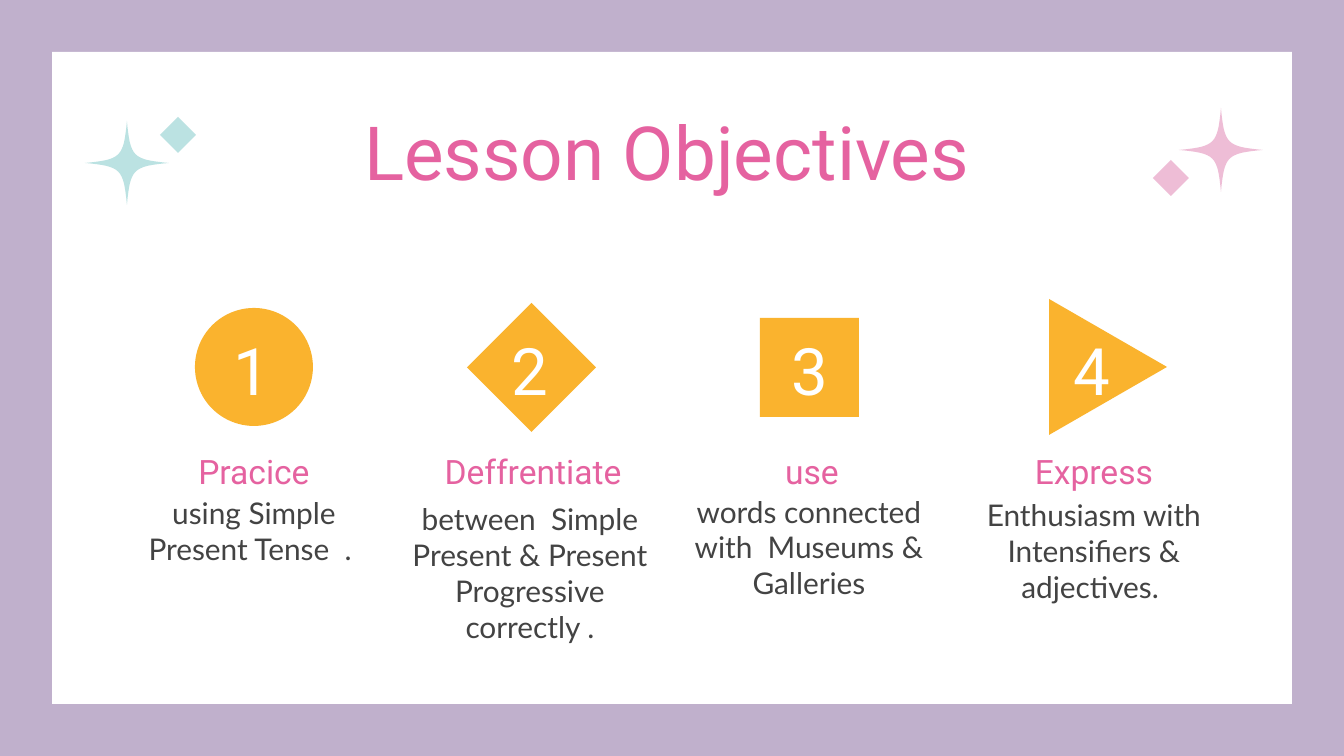
from dataclasses import dataclass

import pptx
from pptx import util as u
from pptx.dml import color
from pptx.enum import shapes, text

SCALE = 914400 / 134.4
FINE = 100
INSET = 13
COLORS = {
    "lilac": "C0B0CC",
    "white": "FFFFFF",
    "mint": "BBE2E2",
    "blush": "EEBDD6",
    "amber": "FAB32E",
    "pink": "E562A0",
    "gray": "434343",
}
MSO = shapes.MSO_SHAPE


@dataclass(frozen=True)
class Box:
    x: int
    y: int
    w: int
    h: int


@dataclass(frozen=True)
class Style:
    font: str
    size: int
    color: str


@dataclass(frozen=True)
class Sparkle:
    star_x: int
    star_y: int
    gem_x: int
    gem_y: int
    color: str


@dataclass(frozen=True)
class Objective:
    kind: MSO
    marker: Box
    rotation: int
    number: Box
    heading: str
    heading_box: Box
    detail: str
    detail_box: Box
    bottom_inset: int = INSET


TITLE = Style("Roboto", 40, "pink")
NUMBER = Style("Roboto", 35, "white")
HEADING = Style("Roboto", 18, "pink")
DETAIL = Style("Lato", 16, "gray")


def centered(cx: int, cy: int, w: int, h: int) -> Box:
    return Box(cx - w // 2, cy - h // 2, w, h)


SPARKLES = [
    Sparkle(127, 163, 178, 135, "mint"),
    Sparkle(1221, 150, 1171, 178, "blush"),
]
OBJECTIVES = [
    Objective(MSO.OVAL, centered(254, 367, 118, 118), 0, centered(252, 369, 228, 60),
              "Pracice", centered(254, 471, 276, 52),
              "using Simple Present Tense  . ", Box(125, 484, 258, 93)),
    Objective(MSO.DIAMOND, centered(531, 367, 129, 129), 0, centered(530, 369, 228, 60),
              "Deffrentiate", centered(533, 471, 270, 52),
              "between  Simple Present & Present Progressive correctly .",
              Box(391, 526, 278, 93)),
    Objective(MSO.RECTANGLE, centered(809, 367, 99, 99), 0, centered(810, 369, 228, 60),
              "use", centered(812, 471, 276, 52),
              "words connected with  Museums & Galleries", Box(680, 516, 258, 93), 44),
    Objective(MSO.ISOSCELES_TRIANGLE, centered(1108, 367, 136, 118), 90,
              centered(1092, 369, 228, 60),
              "Express", centered(1094, 471, 276, 52),
              "Enthusiasm with Intensifiers & adjectives. ", Box(965, 504, 258, 93)),
]


def px(n: int) -> int:
    return u.Emu(round(n * SCALE))


def rgb(name: str) -> color.RGBColor:
    return color.RGBColor.from_string(COLORS[name])


def paint(sp, fill: str) -> None:
    sp.shadow.inherit = False
    sp.fill.solid()
    sp.fill.fore_color.rgb = rgb(fill)
    sp.line.fill.background()


def place(sp, box: Box) -> None:
    sp.left, sp.top, sp.width, sp.height = map(px, (box.x, box.y, box.w, box.h))


def add_preset(s, kind: MSO, box: Box, fill: str, rotation: int = 0):
    sp = s.shapes.add_shape(kind, px(box.x), px(box.y), px(box.w), px(box.h))
    sp.rotation = rotation
    paint(sp, fill)
    return sp


def star_points(cx: int, cy: int, radius: int, steps: int = 16) -> list[tuple[float, float]]:
    controls = [(0, -1), (-0.08, -0.14), (-0.14, -0.08), (-1, 0)]
    points = []
    for _ in range(4):
        for i in range(steps):
            t = i / steps
            weights = ((1 - t) ** 3, 3 * t * (1 - t) ** 2, 3 * t * t * (1 - t), t ** 3)
            x = sum(k * c[0] for k, c in zip(weights, controls))
            y = sum(k * c[1] for k, c in zip(weights, controls))
            points.append(((cx + radius * x) * FINE, (cy + radius * y) * FINE))
        controls = [(y, -x) for x, y in controls]
    return points


def add_sparkle(s, sparkle: Sparkle) -> None:
    points = star_points(sparkle.star_x, sparkle.star_y, 42)
    builder = s.shapes.build_freeform(*points[0], scale=SCALE / FINE)
    builder.add_line_segments(points[1:], close=True)
    paint(builder.convert_to_shape(), sparkle.color)
    add_preset(s, MSO.DIAMOND, centered(sparkle.gem_x, sparkle.gem_y, 36, 36), sparkle.color)


def write(sp, words: str, style: Style, anchor=text.MSO_ANCHOR.MIDDLE,
          bottom_inset: int = INSET) -> None:
    tf = sp.text_frame
    tf.text = words
    tf.word_wrap = True
    tf.auto_size = text.MSO_AUTO_SIZE.NONE
    tf.vertical_anchor = anchor
    tf.margin_left = tf.margin_right = tf.margin_top = px(INSET)
    tf.margin_bottom = px(bottom_inset)
    p = tf.paragraphs[0]
    p.alignment = text.PP_ALIGN.CENTER
    p.space_before = u.Pt(0)
    pPr = p._p.get_or_add_pPr()
    pPr.set("marL", "0")
    pPr.set("indent", "0")
    pPr.append(pptx.oxml.parse_xml(
        '<a:buNone xmlns:a="http://schemas.openxmlformats.org/drawingml/2006/main"/>'))
    r = p.runs[0]
    r.font.name = style.font
    r.font.size = u.Pt(style.size)
    r.font.bold = False
    r.font.color.rgb = rgb(style.color)


def add_label(s, box: Box, words: str, style: Style) -> None:
    sp = s.shapes.add_textbox(px(box.x), px(box.y), px(box.w), px(box.h))
    write(sp, words, style)


def add_objective(s, number: int, item: Objective) -> None:
    add_preset(s, item.kind, item.marker, "amber", item.rotation)
    add_label(s, item.number, str(number), NUMBER)
    add_label(s, item.heading_box, item.heading, HEADING)
    body = s.placeholders[number]
    place(body, item.detail_box)
    write(body, item.detail, DETAIL, bottom_inset=item.bottom_inset)


def main() -> None:
    prs = pptx.Presentation()
    prs.slide_width, prs.slide_height = px(1344), px(756)
    s = prs.slides.add_slide(prs.slide_layouts.get_by_name("Comparison"))
    s.background.fill.solid()
    s.background.fill.fore_color.rgb = rgb("lilac")
    panel = add_preset(s, MSO.RECTANGLE, Box(52, 52, 1240, 652), "white")
    s.shapes.element.insert(2, panel.element)
    for sparkle in SPARKLES:
        add_sparkle(s, sparkle)
    place(s.shapes.title, Box(344, 93, 645, 85))
    write(s.shapes.title, "Lesson Objectives", TITLE, text.MSO_ANCHOR.TOP)
    for number, item in enumerate(OBJECTIVES, 1):
        add_objective(s, number, item)
    prs.save("out.pptx")


if __name__ == "__main__":
    main()
